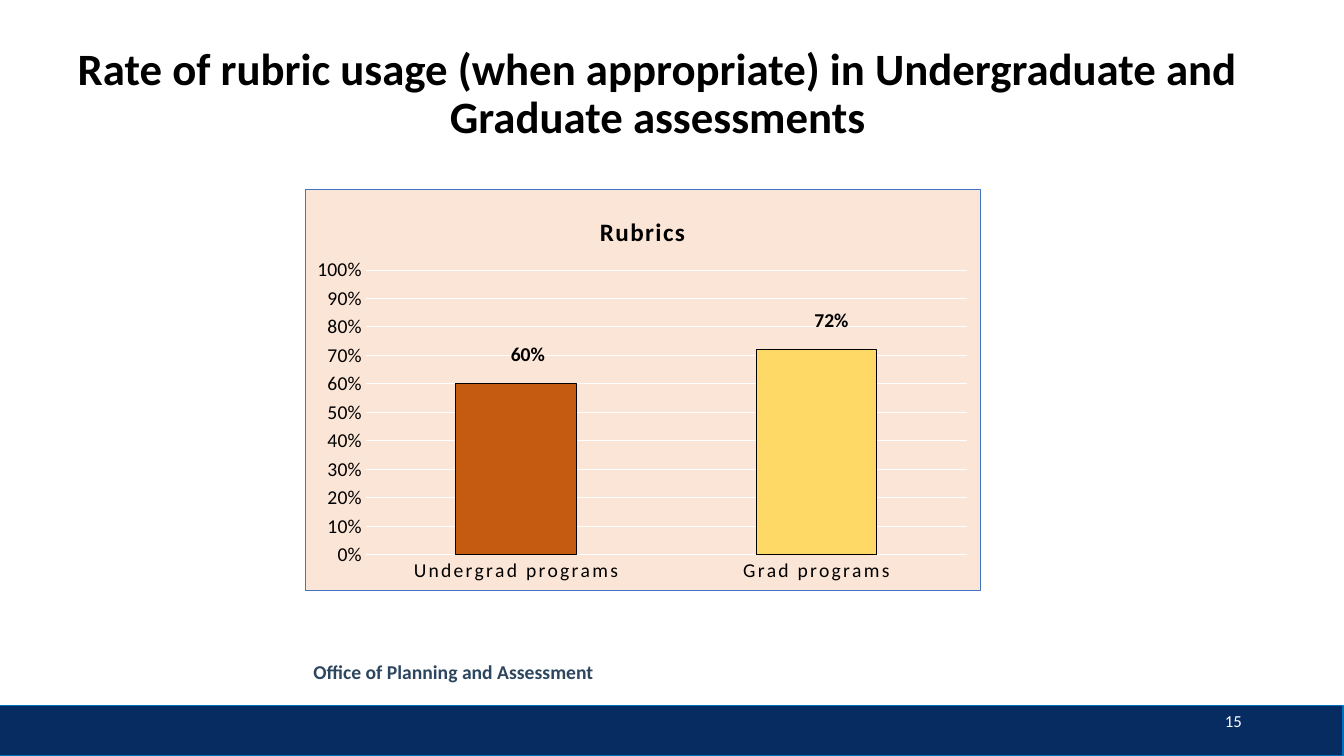
from dataclasses import dataclass

from lxml import etree
from pptx import Presentation
from pptx.chart.data import CategoryChartData
from pptx.dml.color import RGBColor
from pptx.enum import chart as ch, shapes, text
from pptx.oxml import parse_xml
from pptx.oxml.ns import nsdecls, qn
from pptx.util import Pt


@dataclass(frozen=True)
class Theme:
    face: str = "Calibri"
    ink: str = "000000"
    white: str = "FFFFFF"
    navy: str = "072C62"
    blue: str = "0070C0"
    slate: str = "2D4660"
    peach: str = "FBE5D6"
    edge: str = "4472C4"
    rust: str = "C55A11"
    gold: str = "FFD966"
    head: int = 32
    title: int = 18
    body: int = 14
    small: int = 12


T = Theme()
ALIGN = text.PP_ALIGN
ANCHOR = text.MSO_ANCHOR


def rgb(code):
    return RGBColor.from_string(code)


def set_font(font, size, color=T.ink, bold=False, gap=None):
    """Style a font; gap is letter spacing in hundredths of a point."""
    font.name, font.size, font.bold = T.face, Pt(size), bold
    font.color.rgb = rgb(color)
    if gap:
        font._element.set("spc", str(gap))


def paint(fmt, fill, line, width=0.75):
    fmt.fill.solid()
    fmt.fill.fore_color.rgb = rgb(fill)
    fmt.line.color.rgb = rgb(line)
    fmt.line.width = Pt(width)


def add_text(slide, box, words, size, color=T.ink, bold=False,
             align=ALIGN.LEFT, anchor=ANCHOR.TOP, lead=1.0,
             wrap=True, inset=True):
    frame = slide.shapes.add_textbox(*map(Pt, box)).text_frame
    frame.word_wrap, frame.vertical_anchor = wrap, anchor
    if not inset:
        frame.margin_left = frame.margin_right = 0
        frame.margin_top = frame.margin_bottom = 0
    par = frame.paragraphs[0]
    par.text, par.alignment, par.line_spacing = words, align, lead
    set_font(par.font, size, color, bold)


def add_band(slide, box):
    band = slide.shapes.add_shape(shapes.MSO_SHAPE.RECTANGLE, *map(Pt, box))
    band.shadow.inherit = False
    paint(band, T.navy, T.blue, 1)


def place(node, **spots):
    """Give a plot area or chart title a fixed place, in chart fractions."""
    old = node.find(qn("c:layout"))
    if old is not None:
        node.remove(old)
    inner = '<c:layoutTarget val="inner"/>' if "w" in spots else ""
    modes = "".join(f'<c:{k}Mode val="edge"/>' for k in "xy")
    marks = "".join(f'<c:{k} val="{v}"/>' for k, v in spots.items())
    layout = parse_xml(f'<c:layout {nsdecls("c")}><c:manualLayout>'
                       f'{inner}{modes}{marks}</c:manualLayout></c:layout>')
    words = node.find(qn("c:tx"))
    if words is None:
        node.insert(0, layout)
    else:
        words.addnext(layout)


def fill_area(node, line=None):
    """Fill the chart space or plot area, with an edge if line is given."""
    stroke = (f'<a:ln w="{Pt(0.75)}"><a:solidFill><a:srgbClr val="{line}"/>'
              '</a:solidFill></a:ln>') if line else ""
    props = parse_xml(f'<c:spPr {nsdecls("c", "a")}><a:solidFill>'
                      f'<a:srgbClr val="{T.peach}"/></a:solidFill>'
                      f'{stroke}</c:spPr>')
    after = node.find(qn("c:chart"))
    if after is None:
        node.append(props)
    else:
        after.addnext(props)


def style_axis(axis, gap=None):
    axis.major_tick_mark = axis.minor_tick_mark = ch.XL_TICK_MARK.NONE
    axis.format.line.fill.background()
    set_font(axis.tick_labels.font, T.body, gap=gap)


def add_bars(slide, box, rates):
    data = CategoryChartData(number_format="0%")
    data.categories = list(rates)
    data.add_series("Rubrics", list(rates.values()))
    chart = slide.shapes.add_chart(
        ch.XL_CHART_TYPE.COLUMN_CLUSTERED, *map(Pt, box), data).chart
    chart.has_legend = False
    set_font(chart.font, T.body)

    chart.has_title = True
    title = chart.chart_title
    par = title.text_frame.paragraphs[0]
    par.text = "Rubrics"
    set_font(par.font, T.title, bold=True, gap=100)
    place(title._element, x=0.43, y=0.05)

    style_axis(chart.category_axis, gap=150)
    rate = chart.value_axis
    style_axis(rate)
    rate.minimum_scale, rate.maximum_scale, rate.major_unit = 0, 1, 0.1
    rate.tick_labels.number_format = "0%"
    rate.tick_labels.number_format_is_linked = False
    grid = rate.major_gridlines.format.line
    grid.color.rgb, grid.width = rgb(T.white), Pt(0.75)

    plot = chart.plots[0]
    plot.gap_width, plot.vary_by_categories = 150, False
    bars = plot.series[0]
    paint(bars.format, T.rust, T.ink)
    paint(bars.points[1].format, T.gold, T.ink)

    space = chart._chartSpace
    area = space.find(".//" + qn("c:plotArea"))
    place(area, x=0.09, y=0.2, w=0.89, h=0.71)
    fill_area(area)
    fill_area(space, T.edge)


def main():
    deck = Presentation()
    deck.slide_width, deck.slide_height = Pt(960), Pt(540)
    slide = deck.slides.add_slide(deck.slide_layouts[6])

    add_text(slide, (45.4, 15.8, 848.9, 104.4),
             "Rate of rubric usage (when appropriate) in Undergraduate "
             "and Graduate assessments", T.head, bold=True,
             align=ALIGN.CENTER, anchor=ANCHOR.MIDDLE, lead=0.9)
    rates = {"Undergrad programs": 0.6, "Grad programs": 0.72}
    add_bars(slide, (217.6, 135.2, 483, 287.3), rates)
    spots = (357.8, 240.5), (574.6, 216.7)
    for spot, rate in zip(spots, rates.values()):
        add_text(slide, (*spot, 38.9, 24.5), f"{rate:.0%}", T.body,
                 bold=True, wrap=False)
    add_band(slide, (-0.7, 504, 960, 36))
    add_text(slide, (223.9, 470.7, 379.4, 19),
             "Office of Planning and Assessment", T.body, T.slate, True,
             align=ALIGN.JUSTIFY, lead=1.06, inset=False)
    add_text(slide, (678.2, 500.4, 216, 28.8), "15", T.small, T.white,
             align=ALIGN.RIGHT, anchor=ANCHOR.MIDDLE)
    deck.save("out.pptx")


if __name__ == "__main__":
    main()
